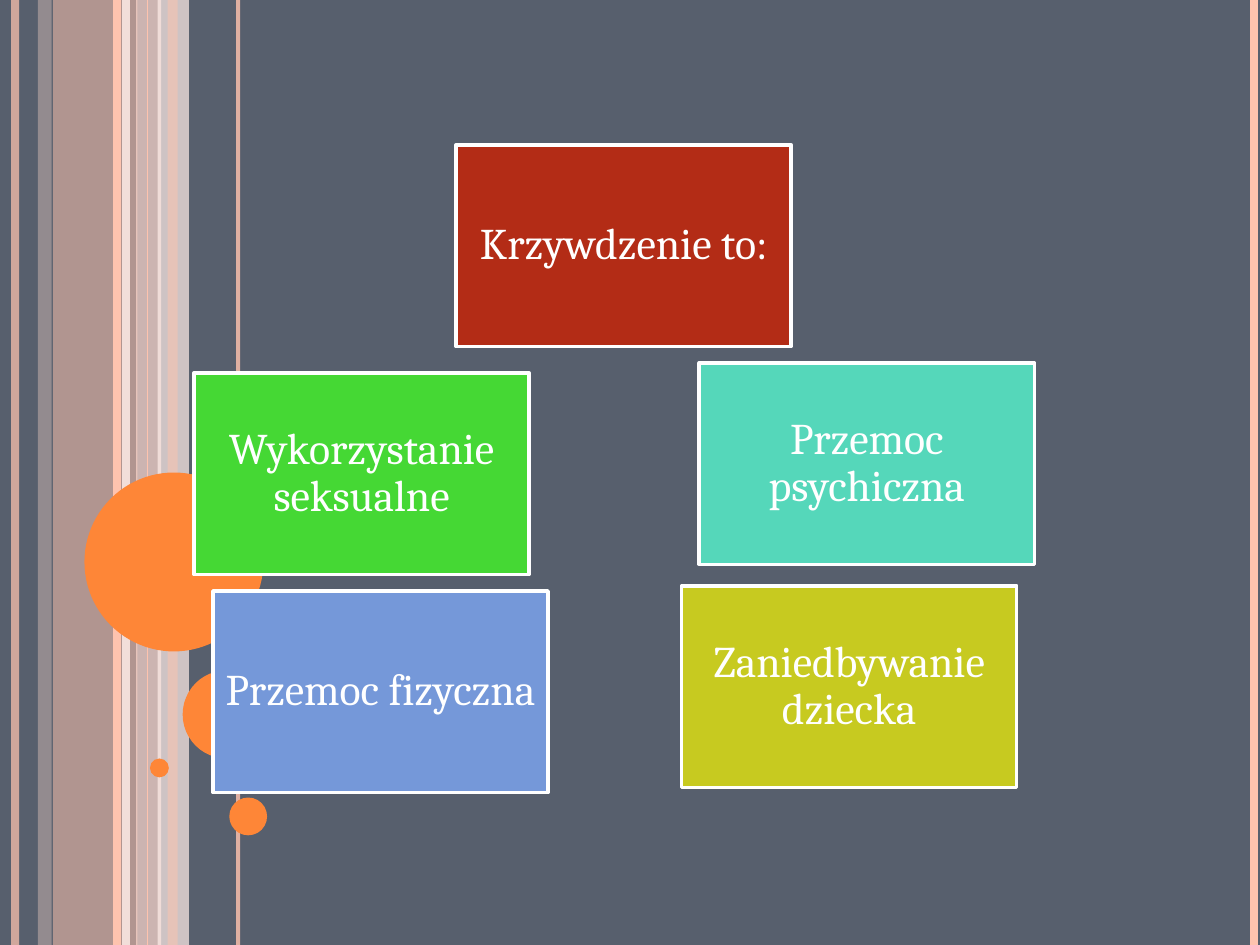
from pptx import Presentation
from pptx import util as u
from pptx.dml.color import RGBColor
from pptx.enum import shapes, text
from pptx.oxml import ns
from lxml import etree

SLATE = RGBColor(0x57, 0x5F, 0x6D)
PEACH = RGBColor(0xFE, 0xC3, 0xAE)
BLUSH = RGBColor(0xFF, 0xD9, 0xCE)
CREAM = RGBColor(0xFF, 0xED, 0xE8)
ORANGE = RGBColor(0xFE, 0x86, 0x37)
WHITE = RGBColor(0xFF, 0xFF, 0xFF)
RED = RGBColor(0xB3, 0x2C, 0x16)
BLUE = RGBColor(0x75, 0x98, 0xD9)
TEAL = RGBColor(0x55, 0xD7, 0xBA)
GREEN = RGBColor(0x45, 0xD8, 0x34)
OLIVE = RGBColor(0xC7, 0xCA, 0x20)

WIDE, HIGH = 10, 7.5
CARD_W, CARD_H = 2.66, 1.6


class Deck:
    """Holds the style and the current slide."""
    font, size, inset = "Cambria", u.Pt(25), u.Inches(0.1)

    def __init__(self):
        self.prs = Presentation()
        self.prs.slide_width = u.Inches(WIDE)
        self.prs.slide_height = u.Inches(HIGH)
        self.slide = self.prs.slides.add_slide(self.prs.slide_layouts[5])
        back = self.slide.background.fill
        back.solid()
        back.fore_color.rgb = SLATE

    def fade(self, shape, alpha):
        """Set the opacity, in percent, of the shape's colour."""
        for color in shape.element.iter(ns.qn("a:srgbClr")):
            etree.SubElement(color, ns.qn("a:alpha"), val=str(alpha * 1000))

    def plain(self, kind, left, top, width, height, color):
        shape = self.slide.shapes.add_shape(
            kind, *map(u.Inches, (left, top, width, height)))
        shape.shadow.inherit = False
        shape.fill.solid()
        shape.fill.fore_color.rgb = color
        shape.line.fill.background()
        return shape

    def band(self, left, width, color, alpha):
        self.fade(self.plain(shapes.MSO_SHAPE.RECTANGLE,
                             left, 0, width, HIGH, color), alpha)

    def stripe(self, left, color, weight, alpha=100):
        line = self.slide.shapes.add_connector(
            shapes.MSO_CONNECTOR.STRAIGHT,
            u.Inches(left), 0, u.Inches(left), u.Inches(HIGH))
        line.line.color.rgb = color
        line.line.width = u.Pt(weight)
        etree.SubElement(line.element.spPr, ns.qn("a:effectLst"))
        if alpha < 100:
            self.fade(line, alpha)

    def dot(self, left, top, width):
        self.plain(shapes.MSO_SHAPE.OVAL, left, top, width, width, ORANGE)

    def title(self, words, left, top, color):
        shape = self.slide.shapes.title
        shape.left, shape.top = u.Inches(left), u.Inches(top)
        shape.width, shape.height = u.Inches(CARD_W), u.Inches(CARD_H)
        shape.fill.solid()
        shape.fill.fore_color.rgb = color
        self.label(shape, words)

    def card(self, words, left, top, color):
        shape = self.plain(shapes.MSO_SHAPE.RECTANGLE,
                           left, top, CARD_W, CARD_H, color)
        self.label(shape, words)

    def label(self, shape, words):
        """Give a card its white outline and centred text."""
        shape.line.color.rgb = WHITE
        shape.line.width = u.Pt(2)
        frame = shape.text_frame
        frame.text = words
        frame.word_wrap = True
        frame.auto_size = text.MSO_AUTO_SIZE.NONE
        frame.vertical_anchor = text.MSO_ANCHOR.MIDDLE
        frame.margin_left = frame.margin_right = self.inset
        frame.margin_top = frame.margin_bottom = self.inset
        para = frame.paragraphs[0]
        para.alignment = text.PP_ALIGN.CENTER
        para.line_spacing = 0.9
        para.font.name, para.font.size = self.font, self.size
        para.font.color.rgb = WHITE


def main():
    deck = Deck()

    # Bands and stripes along the edges
    for band in ((0.42, 0.67, PEACH, 54), (0.3, 0.11, BLUSH, 36),
                 (1.08, 0.2, BLUSH, 70), (1.25, 0.25, CREAM, 71)):
        deck.band(*band)
    for stripe in ((0.12, PEACH, 4.5, 73), (1, CREAM, 4.5, 83),
                   (0.93, PEACH, 4.5), (1.89, PEACH, 2.25, 82),
                   (1.17, PEACH, 0.75), (9.95, PEACH, 4.5)):
        deck.stripe(*stripe)
    deck.band(1.33, 0.08, PEACH, 51)

    # Orange dots
    for dot in ((0.67, 3.75, 1.42), (1.45, 5.32, 0.7),
                (1.19, 6.02, 0.15), (1.82, 6.33, 0.3)):
        deck.dot(*dot)

    # Heading and the four kinds of harm
    deck.title("Krzywdzenie to:", 3.62, 1.15, RED)
    for card in (("Przemoc fizyczna", 1.69, 4.69, BLUE),
                 ("Przemoc psychiczna", 5.55, 2.88, TEAL),
                 ("Wykorzystanie seksualne", 1.54, 2.96, GREEN),
                 ("Zaniedbywanie dziecka", 5.41, 4.65, OLIVE)):
        deck.card(*card)

    deck.prs.save("out.pptx")


if __name__ == "__main__":
    main()
